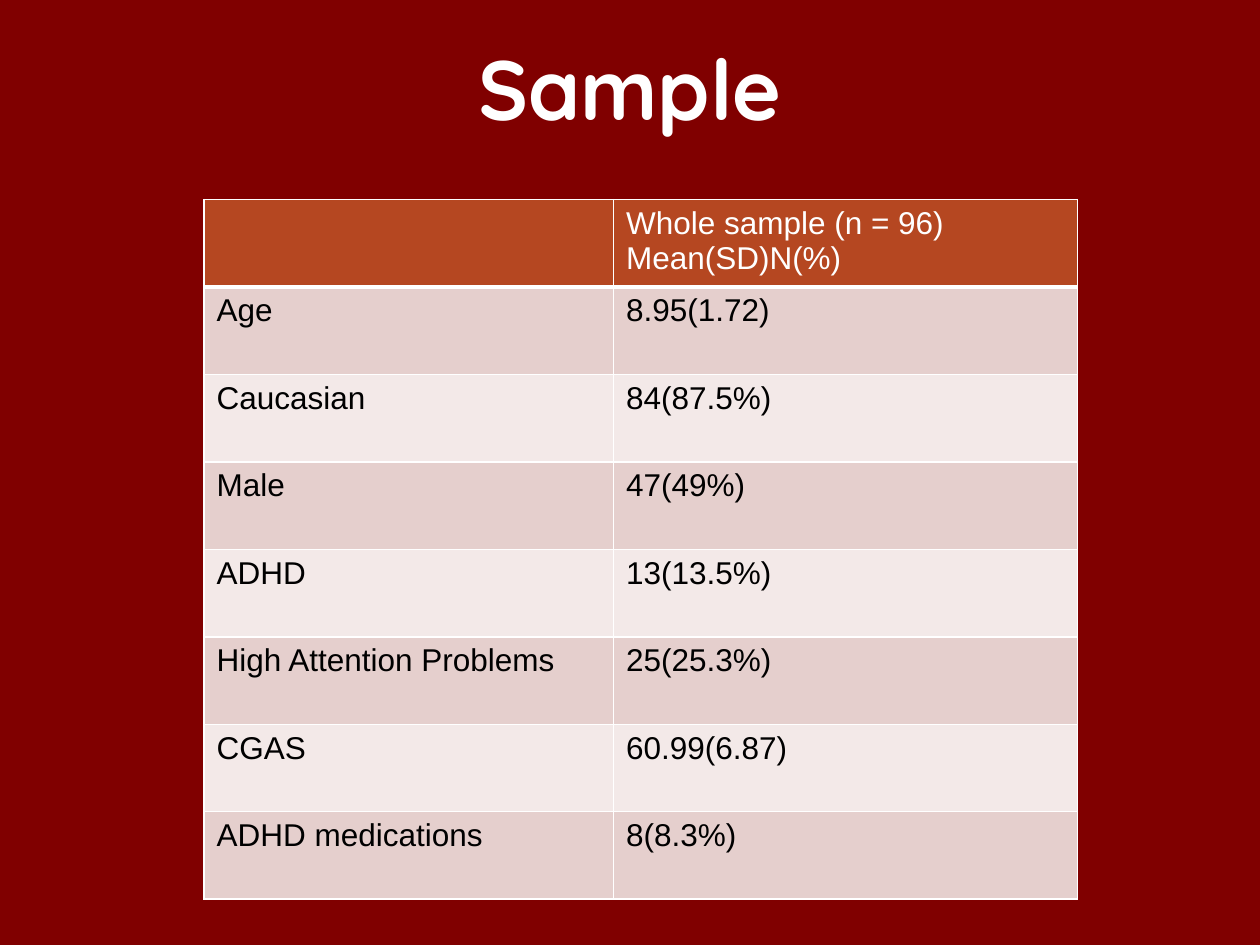
from dataclasses import dataclass

from lxml import etree
from pptx import Presentation
from pptx.dml.color import RGBColor
from pptx.enum.text import MSO_ANCHOR, PP_ALIGN
from pptx.oxml.ns import qn
from pptx.util import Pt

MIDDLE = MSO_ANCHOR.MIDDLE
CENTER = PP_ALIGN.CENTER
TITLE_ONLY = 5


@dataclass(frozen=True)
class Theme:
    background: str = "800000"
    light: str = "FFFFFF"
    dark: str = "000000"
    header: str = "B54721"
    bands: tuple = ("E5CFCD", "F3E9E8")
    title_font: str = "Quicksand"
    body_font: str = "Arial"
    title_size: int = 48
    body_size: int = 18
    border: int = 1
    header_rule: int = 3


HEADINGS = ("", "Whole sample (n = 96)\nMean(SD)N(%)")
MEASURES = [
    ("Age", "8.95(1.72)"),
    ("Caucasian", "84(87.5%)"),
    ("Male", "47(49%)"),
    ("ADHD", "13(13.5%)"),
    ("High Attention Problems", "25(25.3%)"),
    ("CGAS", "60.99(6.87)"),
    ("ADHD medications", "8(8.3%)"),
]


class SlideBuilder:
    """Draws elements on one slide in a shared theme."""

    def __init__(self, slide, theme):
        self.slide = slide
        self.theme = theme

    def background(self):
        fill = self.slide.background.fill
        fill.solid()
        fill.fore_color.rgb = RGBColor.from_string(self.theme.background)

    def format_text(self, text_frame, font_name, size, color, bold=False):
        for paragraph in text_frame.paragraphs:
            for run in paragraph.runs:
                run.font.name = font_name
                run.font.size = Pt(size)
                run.font.bold = bold
                run.font.color.rgb = RGBColor.from_string(color)

    def title(self, text, left, top, width, height):
        shape = self.slide.shapes.title
        shape.left, shape.top = Pt(left), Pt(top)
        shape.width, shape.height = Pt(width), Pt(height)
        text_frame = shape.text_frame
        text_frame.text = text
        text_frame.vertical_anchor = MIDDLE
        paragraph = text_frame.paragraphs[0]
        paragraph.alignment = CENTER
        paragraph.line_spacing = 0.95
        self.format_text(text_frame, self.theme.title_font,
                         self.theme.title_size, self.theme.light, bold=True)

    def cell_borders(self, cell, top, bottom):
        """Add the four border lines; call before filling, as the schema orders them."""
        properties = cell._tc.get_or_add_tcPr()
        side = self.theme.border
        for tag, width in (("lnL", side), ("lnR", side), ("lnT", top), ("lnB", bottom)):
            line = etree.SubElement(properties, qn(f"a:{tag}"), w=str(Pt(width)))
            fill = etree.SubElement(line, qn("a:solidFill"))
            etree.SubElement(fill, qn("a:srgbClr"), val=self.theme.light)

    def table(self, rows, left, top, column_widths, row_height):
        theme = self.theme
        frame = self.slide.shapes.add_table(
            len(rows), len(column_widths), Pt(left), Pt(top),
            Pt(sum(column_widths)), Pt(row_height * len(rows)))
        table = frame.table
        for column, width in zip(table.columns, column_widths):
            column.width = Pt(width)
        for row_index, values in enumerate(rows):
            is_header = row_index == 0
            fill_color = theme.header if is_header else theme.bands[(row_index - 1) % 2]
            text_color = theme.light if is_header else theme.dark
            top_width = theme.header_rule if row_index == 1 else theme.border
            bottom_width = theme.header_rule if is_header else theme.border
            for column_index, value in enumerate(values):
                cell = table.cell(row_index, column_index)
                self.cell_borders(cell, top_width, bottom_width)
                cell.fill.solid()
                cell.fill.fore_color.rgb = RGBColor.from_string(fill_color)
                cell.text_frame.text = value
                self.format_text(cell.text_frame, theme.body_font,
                                 theme.body_size, text_color)


def main():
    presentation = Presentation()
    presentation.slide_width, presentation.slide_height = Pt(720), Pt(540)
    slide = presentation.slides.add_slide(presentation.slide_layouts[TITLE_ONLY])
    builder = SlideBuilder(slide, Theme())
    builder.background()
    builder.title("Sample", 61.2, 7.2, 597, 90)
    builder.table([HEADINGS, *MEASURES], 116.6, 114, (234, 265), 50)
    presentation.save("out.pptx")


if __name__ == "__main__":
    main()
